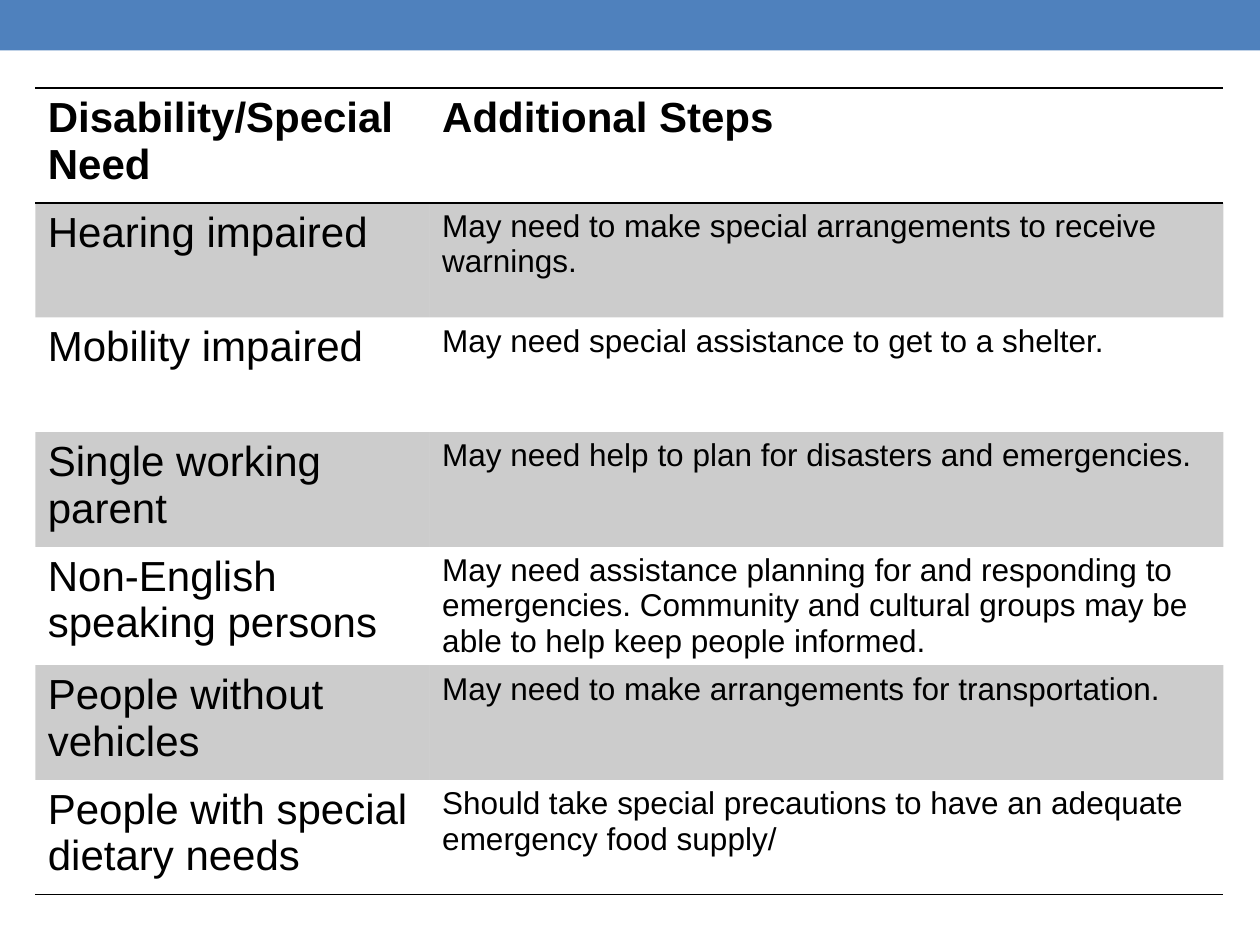
from lxml import etree
from pptx import Presentation
from pptx.dml.color import RGBColor
from pptx.enum.shapes import MSO_SHAPE
from pptx.oxml.ns import qn
from pptx.util import Inches, Pt

RECT = MSO_SHAPE.RECTANGLE
WIDE, HIGH = Inches(10), Inches(7.5)
FACE = "Arial"
COLORS = {"bar": "4F81BD", "ink": "000000"}
SHADE = 20  # percent of ink in the banded rows
COLS = (3.13, 6.3)
ROW = 0.91

STEPS = [
    ("Disability/Special Need", "Additional Steps"),
    ("Hearing impaired",
     "May need to make special arrangements to receive warnings."),
    ("Mobility impaired", "May need special assistance to get to a shelter."),
    ("Single working parent",
     "May need help to plan for disasters and emergencies."),
    ("Non-English speaking persons",
     "May need assistance planning for and responding to emergencies. "
     "Community and cultural groups may be able to help keep people informed."),
    ("People without vehicles",
     "May need to make arrangements for transportation."),
    ("People with special dietary needs",
     "Should take special precautions to have an adequate emergency food supply/"),
]


def color(name):
    return RGBColor.from_string(COLORS[name])


def add_bar(slide, left, top, width, height):
    bar = slide.shapes.add_shape(RECT, left, top, width, height)
    bar.shadow.inherit = False
    bar.fill.solid()
    bar.fill.fore_color.rgb = color("bar")
    bar.line.fill.background()


def set_edges(cell, ruled):
    """Rule the named sides (of L, R, T, B) and clear the others."""
    props = cell._tc.get_or_add_tcPr()
    for side in "LRTB":
        line = etree.SubElement(props, qn("a:ln" + side), w=str(Pt(1)))
        if side in ruled:
            fill = etree.SubElement(line, qn("a:solidFill"))
            etree.SubElement(fill, qn("a:srgbClr"), val=COLORS["ink"])
        else:
            etree.SubElement(line, qn("a:noFill"))


def set_fill(cell, shaded):
    if not shaded:
        cell.fill.background()
        return
    cell.fill.solid()
    cell.fill.fore_color.rgb = color("ink")
    tint = cell._tc.tcPr.find(qn("a:solidFill")).find(qn("a:srgbClr"))
    etree.SubElement(tint, qn("a:alpha"), val=str(SHADE * 1000))


def set_text(cell, text, size, bold):
    cell.text = text
    font = cell.text_frame.paragraphs[0].font
    font.name, font.size, font.bold = FACE, Pt(size), bold
    font.color.rgb = color("ink")


def add_steps(slide, left, top, width, height):
    last = len(STEPS) - 1
    table = slide.shapes.add_table(
        len(STEPS), len(COLS), left, top, width, height).table
    table.first_row = table.horz_banding = False
    for col, share in zip(table.columns, COLS):
        col.width = int(width * share / sum(COLS))
    for r, texts in enumerate(STEPS):
        head = r == 0
        # Rules frame the header and close the table
        ruled = {0: "TB", 1: "T", last: "B"}.get(r, "")
        for c, text in enumerate(texts):
            cell = table.cell(r, c)
            set_text(cell, text, 24 if head or c == 0 else 18, head)
            set_edges(cell, ruled)
            set_fill(cell, r % 2 == 1)


def main():
    deck = Presentation()
    deck.slide_width, deck.slide_height = WIDE, HIGH
    slide = deck.slides.add_slide(deck.slide_layouts[6])
    # Top band
    add_bar(slide, 0, 0, WIDE, Inches(0.4))
    # Table of needs and steps
    add_steps(slide, Inches(0.28), Inches(0.7),
              Inches(sum(COLS)), Inches(ROW * len(STEPS)))
    deck.save("out.pptx")


if __name__ == "__main__":
    main()
